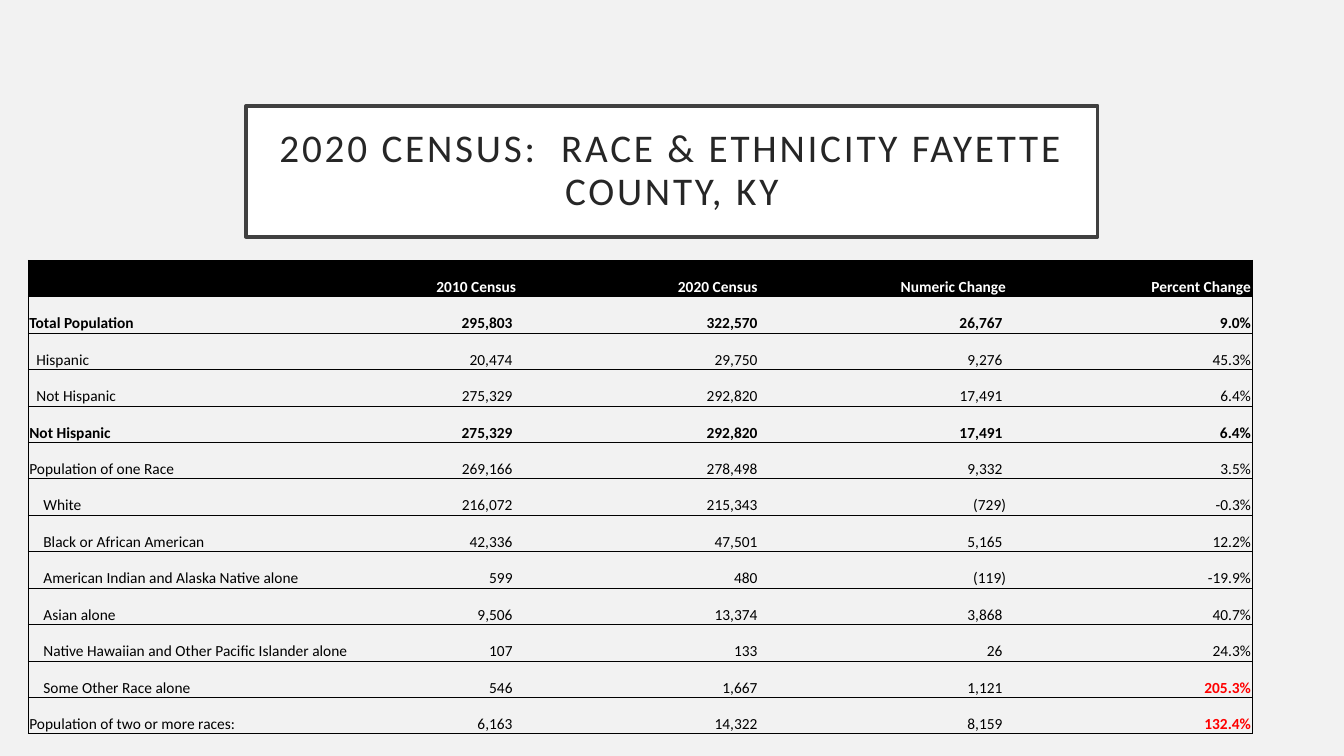
from lxml import etree
from pptx import Presentation
from pptx.dml.color import RGBColor
from pptx.enum.shapes import MSO_SHAPE
from pptx.enum.text import MSO_ANCHOR, PP_ALIGN
from pptx.oxml.ns import qn
from pptx.util import Pt

RECTANGLE = MSO_SHAPE.RECTANGLE
MIDDLE, BOTTOM = MSO_ANCHOR.MIDDLE, MSO_ANCHOR.BOTTOM
LEFT, CENTER, RIGHT = PP_ALIGN.LEFT, PP_ALIGN.CENTER, PP_ALIGN.RIGHT

BLACK = RGBColor(0x00, 0x00, 0x00)
WHITE = RGBColor(0xFF, 0xFF, 0xFF)
RED = RGBColor(0xFF, 0x00, 0x00)
TITLE_GRAY = RGBColor(0x26, 0x26, 0x26)
FRAME_GRAY = RGBColor(0x40, 0x40, 0x40)
PAGE_GRAY = RGBColor(0xF2, 0xF2, 0xF2)

FONT = "Calibri"
CELL_MARGIN = 0.75
SPACE_WIDTH = 2.5
COLUMN_WIDTHS = [260.6, 88.6, 175, 175, 175]
ROW_HEIGHT = 26.03

TITLE = "2020 CENSUS:  RACE & ETHNICITY FAYETTE COUNTY, KY"
HEADER = ["", "2010 Census", "2020 Census", "Numeric Change", "Percent Change"]
# Indent level in spaces, then the cells of the row
CENSUS_ROWS = [
    (0, ["Total Population", "295,803", "322,570", "26,767", "9.0%"]),
    (2, ["Hispanic", "20,474", "29,750", "9,276", "45.3%"]),
    (2, ["Not Hispanic", "275,329", "292,820", "17,491", "6.4%"]),
    (0, ["Not Hispanic", "275,329", "292,820", "17,491", "6.4%"]),
    (0, ["Population of one Race", "269,166", "278,498", "9,332", "3.5%"]),
    (4, ["White", "216,072", "215,343", "(729)", "-0.3%"]),
    (4, ["Black or African American", "42,336", "47,501", "5,165", "12.2%"]),
    (4, ["American Indian and Alaska Native alone", "599", "480", "(119)", "-19.9%"]),
    (4, ["Asian alone", "9,506", "13,374", "3,868", "40.7%"]),
    (4, ["Native Hawaiian and Other Pacific Islander alone", "107", "133", "26", "24.3%"]),
    (4, ["Some Other Race alone", "546", "1,667", "1,121", "205.3%"]),
    (0, ["Population of two or more races:", "6,163", "14,322", "8,159", "132.4%"]),
]
BOLD_ROWS = {1, 4}
HIGHLIGHTS = {"205.3%", "132.4%"}


def write_text(frame, text, size=11, color=BLACK, bold=False, align=LEFT,
               line_spacing=None, tracking=None):
    para = frame.paragraphs[0]
    para.alignment = align
    para.line_spacing = line_spacing
    span = para.add_run()
    span.text = text
    span.font.name = FONT
    span.font.size = Pt(size)
    span.font.bold = bold
    span.font.color.rgb = color
    if tracking:
        span.font._element.set("spc", str(tracking * 100))


def add_title(page, left, top, width, height):
    box = page.shapes.add_shape(RECTANGLE, Pt(left), Pt(top), Pt(width), Pt(height))
    box.shadow.inherit = False
    box.fill.solid()
    box.fill.fore_color.rgb = WHITE
    box.line.color.rgb = FRAME_GRAY
    box.line.width = Pt(2.5)
    frame = box.text_frame
    frame.word_wrap = True
    frame.vertical_anchor = MIDDLE
    frame.margin_left = frame.margin_right = Pt(14.4)
    frame.margin_top = frame.margin_bottom = Pt(14.4)
    write_text(frame, TITLE, size=28, color=TITLE_GRAY, align=CENTER,
               line_spacing=0.9, tracking=2)


def set_borders(cell, visible_sides):
    """Draw thin black lines on the given sides and none on the others."""
    properties = cell._tc.get_or_add_tcPr()
    for side in "LRTB":
        line = etree.SubElement(properties, qn(f"a:ln{side}"), w=str(Pt(0.5)))
        if side in visible_sides:
            fill = etree.SubElement(line, qn("a:solidFill"))
            etree.SubElement(fill, qn("a:srgbClr"), val=str(BLACK))
        else:
            etree.SubElement(line, qn("a:noFill"))


def fill_cell(cell, text, row, column, indent):
    last_column = len(HEADER) - 1
    is_header = row == 0
    set_borders(cell, "TB" + {0: "L", last_column: "R"}.get(column, ""))
    if is_header:
        cell.fill.solid()
        cell.fill.fore_color.rgb = BLACK
    else:
        cell.fill.background()

    # Figures leave room for a closing bracket on their right
    is_figure = 0 < column < last_column and not is_header and not text.endswith(")")
    is_inset = is_figure or text == "2020 Census"
    cell.vertical_anchor = BOTTOM
    cell.margin_left = Pt(CELL_MARGIN + (indent * SPACE_WIDTH if column == 0 else 0))
    cell.margin_right = Pt(CELL_MARGIN + (SPACE_WIDTH if is_inset else 0))
    cell.margin_top = Pt(CELL_MARGIN)
    cell.margin_bottom = 0

    color = WHITE if is_header else RED if text in HIGHLIGHTS else BLACK
    bold = is_header or row in BOLD_ROWS or text in HIGHLIGHTS
    write_text(cell.text_frame, text, color=color, bold=bold,
               align=RIGHT if column else LEFT)


def add_census_table(page, left, top):
    rows = [(0, HEADER)] + CENSUS_ROWS
    table = page.shapes.add_table(
        len(rows), len(HEADER), Pt(left), Pt(top),
        Pt(sum(COLUMN_WIDTHS)), Pt(ROW_HEIGHT * len(rows))).table
    table.first_row = False
    table.horz_banding = False
    for column, width in zip(table.columns, COLUMN_WIDTHS):
        column.width = Pt(width)
    for row, (indent, texts) in enumerate(rows):
        table.rows[row].height = Pt(ROW_HEIGHT)
        for column, text in enumerate(texts):
            fill_cell(table.cell(row, column), text, row, column, indent)


def main():
    deck = Presentation()
    deck.slide_width, deck.slide_height = Pt(960), Pt(540)
    page = deck.slides.add_slide(deck.slide_layouts[6])
    page.background.fill.solid()
    page.background.fill.fore_color.rgb = PAGE_GRAY
    add_title(page, 175.7, 75.6, 608.4, 93.6)
    add_census_table(page, 20.2, 185.8)
    deck.save("out.pptx")


if __name__ == "__main__":
    main()
